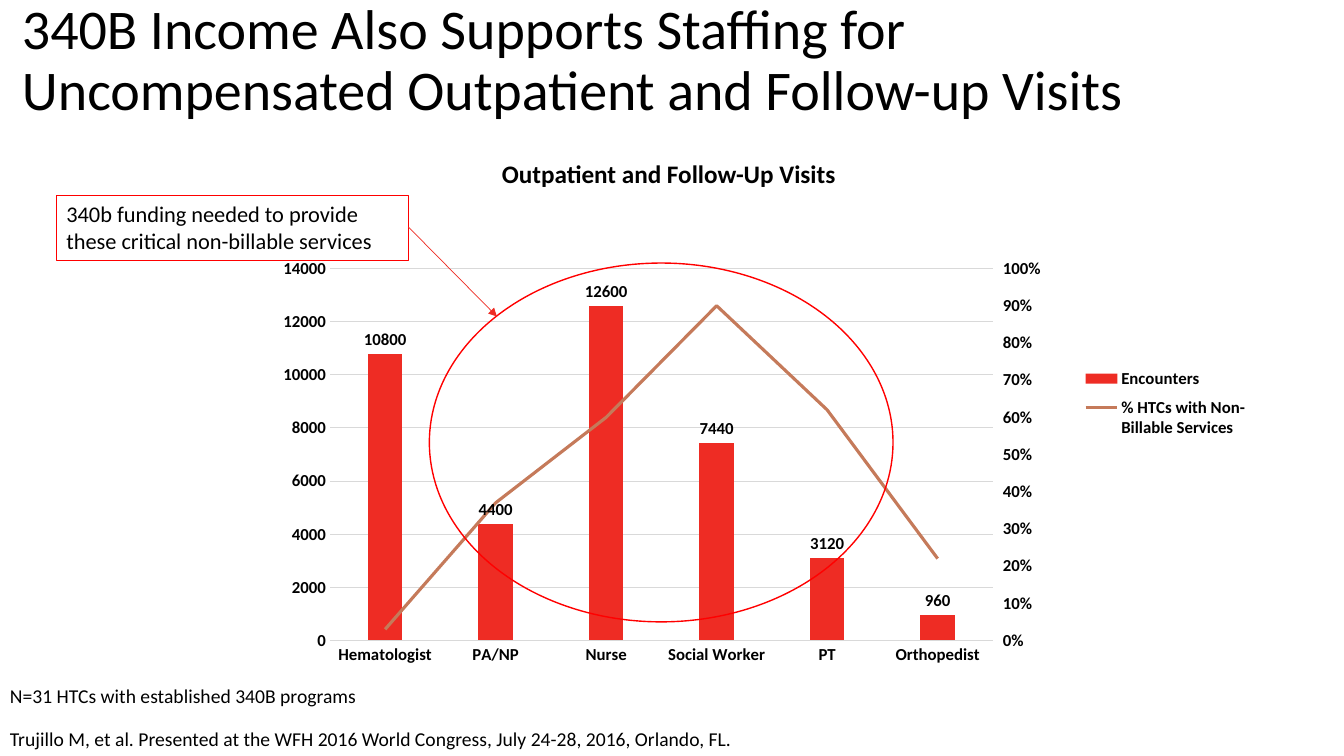
from dataclasses import dataclass

from lxml import etree
from pptx import Presentation
from pptx import oxml
from pptx import util as u
from pptx.chart import data as chart_data
from pptx.dml.color import RGBColor
from pptx.enum import chart as ch
from pptx.enum import shapes, text
from pptx.oxml import ns

FONT = "Calibri"
BLACK = RGBColor(0x00, 0x00, 0x00)
BRIGHT_RED = RGBColor(0xFF, 0x00, 0x00)
BAR_RED = RGBColor(0xEE, 0x2C, 0x24)
LINE_BROWN = RGBColor(0xC5, 0x7A, 0x5A)
GRID_GREY = RGBColor(0xD9, 0xD9, 0xD9)

PERCENT_AXES = """
<c:axes %s>
  <c:valAx>
    <c:axId val="5002"/>
    <c:scaling><c:orientation val="minMax"/><c:max val="1"/><c:min val="0"/></c:scaling>
    <c:delete val="0"/><c:axPos val="r"/>
    <c:numFmt formatCode="0%%" sourceLinked="0"/>
    <c:majorTickMark val="out"/><c:minorTickMark val="none"/><c:tickLblPos val="nextTo"/>
    <c:spPr><a:ln><a:noFill/></a:ln></c:spPr>
    <c:crossAx val="5001"/><c:crosses val="max"/><c:majorUnit val="0.1"/>
  </c:valAx>
  <c:catAx>
    <c:axId val="5001"/>
    <c:scaling><c:orientation val="minMax"/></c:scaling>
    <c:delete val="1"/><c:axPos val="b"/>
    <c:majorTickMark val="none"/><c:minorTickMark val="none"/><c:tickLblPos val="nextTo"/>
    <c:crossAx val="5002"/><c:crosses val="autoZero"/>
  </c:catAx>
</c:axes>""" % ns.nsdecls("c", "a")


@dataclass
class Label:
    words: str
    left: float
    top: float
    width: float
    height: float
    size: float
    bold: bool = False
    spacing: float = 1.0
    wrap: bool = True
    anchor: text.MSO_ANCHOR = text.MSO_ANCHOR.TOP
    border: RGBColor | None = None


LABELS = [
    Label("340B Income Also Supports Staffing for Uncompensated Outpatient and Follow-up Visits",
          8.64, 7.9, 851.8, 72.7, 40, spacing=0.9, anchor=text.MSO_ANCHOR.MIDDLE),
    Label("Trujillo M, et al. Presented at the WFH 2016 World Congress, July 24-28, 2016, Orlando, FL.",
          0, 517.7, 679, 22.3, 14, spacing=0.9),
    Label("N=31 HTCs with established 340B programs", 0, 488.2, 270, 21.6, 14, spacing=0.8),
    Label("Outpatient and Follow-Up Visits", 351.4, 109.4, 254.9, 28.8, 18, bold=True, wrap=False),
    Label("340b funding needed to provide these critical non-billable services",
          40.3, 139.7, 251.3, 46.1, 16, border=BRIGHT_RED),
]


def add_label(s, label: Label) -> None:
    sp = s.shapes.add_textbox(u.Pt(label.left), u.Pt(label.top), u.Pt(label.width), u.Pt(label.height))
    if label.border is not None:
        sp.line.color.rgb = label.border
        sp.line.width = u.Pt(0.75)
    tf = sp.text_frame
    tf.word_wrap = label.wrap
    tf.vertical_anchor = label.anchor
    tf.text = label.words
    p = tf.paragraphs[0]
    p.line_spacing = label.spacing
    r = p.runs[0]
    r.font.name = FONT
    r.font.size = u.Pt(label.size)
    r.font.bold = label.bold
    r.font.color.rgb = BLACK


def set_layout(parent, index: int, x: float, y: float, w: float, h: float, inner: bool = False) -> None:
    """Place a chart part by fractions of the chart's size."""
    for old in parent.findall(ns.qn("c:layout")):
        parent.remove(old)
    layout = etree.Element(ns.qn("c:layout"))
    manual = etree.SubElement(layout, ns.qn("c:manualLayout"))
    values = {"layoutTarget": "inner"} if inner else {}
    values |= {"xMode": "edge", "yMode": "edge", "x": x, "y": y, "w": w, "h": h}
    for name, value in values.items():
        etree.SubElement(manual, ns.qn(f"c:{name}")).set("val", str(value))
    parent.insert(index, layout)


def move_to_percent_axis(chart) -> None:
    """Turn the second bar series into a line on a right-hand axis."""
    bars = chart.plots[0]
    ser = bars.series[1]._element
    plot_area = ser.getparent().getparent()
    bar_chart = ser.getparent()
    line_chart = oxml.parse_xml(
        f'<c:lineChart {ns.nsdecls("c")}><c:grouping val="standard"/><c:varyColors val="0"/>'
        '<c:marker val="1"/><c:axId val="5001"/><c:axId val="5002"/></c:lineChart>')
    for node in ser.findall(ns.qn("c:invertIfNegative")):
        ser.remove(node)
    line_chart.insert(2, ser)
    bar_chart.addnext(line_chart)
    last_axis = plot_area.findall(ns.qn("c:valAx"))[-1]
    for axis in reversed(list(oxml.parse_xml(PERCENT_AXES))):
        last_axis.addnext(axis)


def add_visits_chart(s) -> None:
    data = chart_data.CategoryChartData()
    data.categories = ["Hematologist", "PA/NP", "Nurse", "Social Worker", "PT", "Orthopedist"]
    data.add_series("Encounters", (10800, 4400, 12600, 7440, 3120, 960))
    data.add_series("% HTCs with Non-Billable Services", (0.03, 0.37, 0.6, 0.9, 0.62, 0.22), "0%")
    chart = s.shapes.add_chart(ch.XL_CHART_TYPE.COLUMN_CLUSTERED, u.Pt(136.8), u.Pt(165.6),
                               u.Pt(760.3), u.Pt(365), data).chart
    chart.has_title = False
    chart.font.name = FONT
    chart.font.size = u.Pt(12)
    chart.font.bold = True
    chart.font.color.rgb = BLACK

    cat, val = chart.category_axis, chart.value_axis
    for axis in (cat, val):
        axis.major_tick_mark = ch.XL_TICK_MARK.NONE
    cat.format.line.color.rgb = GRID_GREY
    cat.format.line.width = u.Pt(0.75)
    val.format.line.fill.background()
    val.minimum_scale, val.maximum_scale, val.major_unit = 0, 14000, 2000
    val.major_gridlines.format.line.color.rgb = GRID_GREY
    val.major_gridlines.format.line.width = u.Pt(0.75)

    move_to_percent_axis(chart)
    bars, lines = chart.plots
    bars.vary_by_categories = False
    bars.gap_width, bars.overlap = 219, -27
    encounters, share = bars.series[0], lines.series[0]
    encounters.format.fill.solid()
    encounters.format.fill.fore_color.rgb = BAR_RED
    labels = encounters.data_labels
    labels.show_value = True
    labels.position = ch.XL_LABEL_POSITION.OUTSIDE_END
    labels.font.name = FONT
    labels.font.size = u.Pt(12)
    labels.font.bold = True
    labels.font.color.rgb = BLACK
    share.smooth = False
    share.marker.style = ch.XL_MARKER_STYLE.NONE
    share.format.line.color.rgb = LINE_BROWN
    share.format.line.width = u.Pt(2.25)

    chart.has_legend = True
    chart.legend.position = ch.XL_LEGEND_POSITION.BOTTOM
    chart.legend.include_in_layout = False
    set_layout(chart.legend._element, 1, 0.83, 0.25, 0.17, 0.17)
    plot_area = cat._element.getparent()
    set_layout(plot_area, 0, 0.13, 0.072, 0.623, 0.728, inner=True)


def add_highlight(s) -> None:
    """Ring the non-billable services."""
    sp = s.shapes.add_shape(shapes.MSO_SHAPE.OVAL, u.Pt(306.7), u.Pt(187.9), u.Pt(331.2), u.Pt(256.3))
    sp.shadow.inherit = False
    sp.fill.background()
    sp.line.color.rgb = BRIGHT_RED
    sp.line.width = u.Pt(1)


def add_arrow(s) -> None:
    arrow = s.shapes.add_connector(shapes.MSO_CONNECTOR.STRAIGHT, u.Pt(291.6), u.Pt(162),
                                   u.Pt(355), u.Pt(226.1))
    arrow.line.color.rgb = BAR_RED
    arrow.line.width = u.Pt(0.5)
    etree.SubElement(arrow.line._get_or_add_ln(), ns.qn("a:tailEnd")).set("type", "triangle")
    etree.SubElement(arrow._element.spPr, ns.qn("a:effectLst"))


def main() -> None:
    prs = Presentation()
    prs.slide_width, prs.slide_height = u.Pt(960), u.Pt(540)
    s = prs.slides.add_slide(prs.slide_layouts[6])
    add_visits_chart(s)
    add_highlight(s)
    for label in LABELS:
        add_label(s, label)
    add_arrow(s)
    prs.save("out.pptx")


if __name__ == "__main__":
    main()
